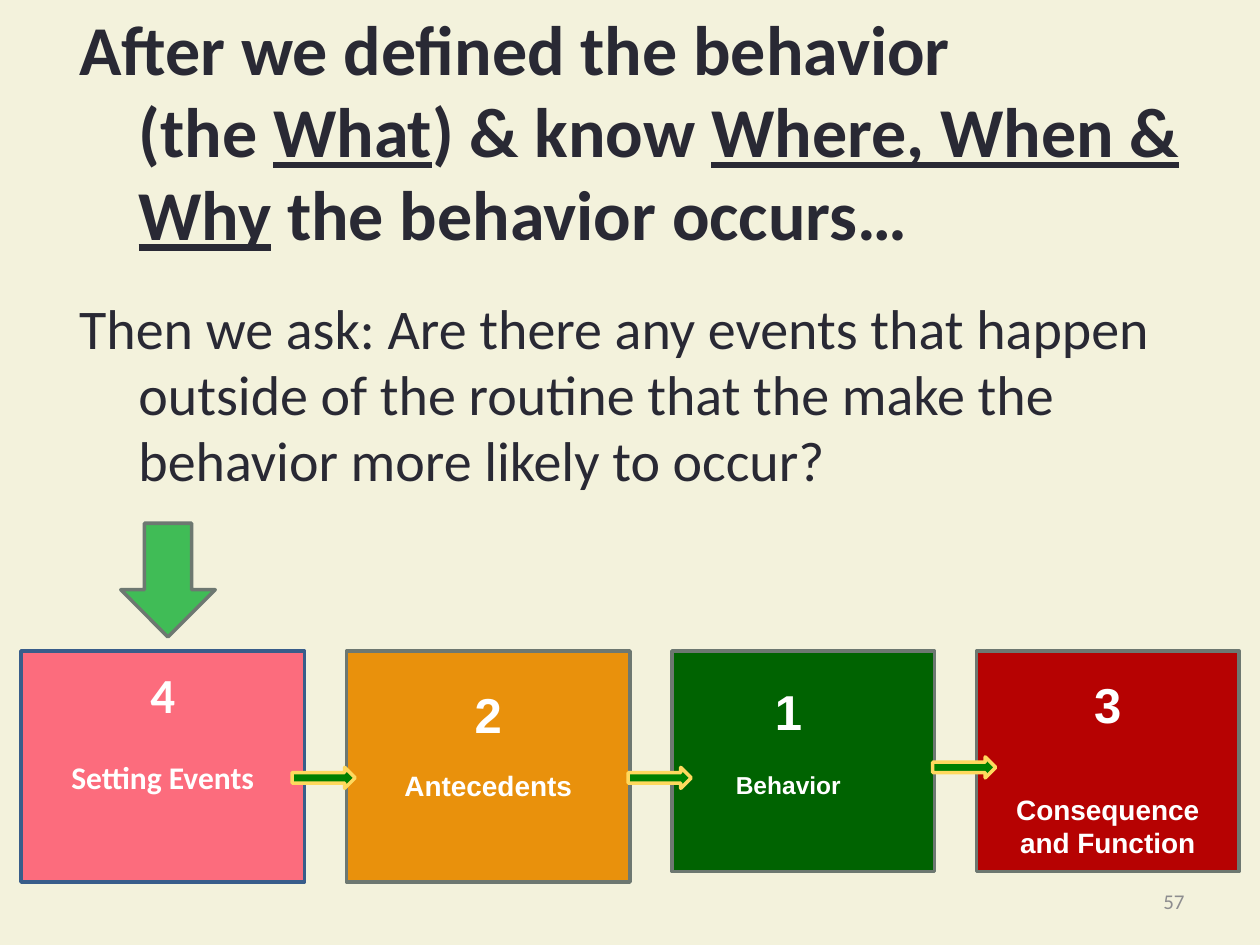
from pptx import Presentation
from pptx.dml.color import RGBColor
from pptx.enum.shapes import MSO_SHAPE
from pptx.enum.text import MSO_ANCHOR, MSO_AUTO_SIZE, PP_ALIGN
from pptx.util import Pt

RECTANGLE, RIGHT_ARROW, DOWN_ARROW = MSO_SHAPE.RECTANGLE, MSO_SHAPE.RIGHT_ARROW, MSO_SHAPE.DOWN_ARROW
TOP, MIDDLE = MSO_ANCHOR.TOP, MSO_ANCHOR.MIDDLE
LEFT, CENTER, RIGHT = PP_ALIGN.LEFT, PP_ALIGN.CENTER, PP_ALIGN.RIGHT
NO_AUTOFIT = MSO_AUTO_SIZE.NONE

CREAM = RGBColor(0xF3, 0xF2, 0xDC)
INK = RGBColor(0x29, 0x29, 0x34)
WHITE = RGBColor(0xFF, 0xFF, 0xFF)
GRAY = RGBColor(0x8D, 0x8D, 0x8F)
SLATE = RGBColor(0x6D, 0x78, 0x71)
BLUE = RGBColor(0x38, 0x5D, 0x8A)
PINK = RGBColor(0xFC, 0x6C, 0x7D)
ORANGE = RGBColor(0xE9, 0x91, 0x0C)
DARK_GREEN = RGBColor(0x00, 0x63, 0x01)
RED = RGBColor(0xB6, 0x02, 0x02)
ARROW_GREEN = RGBColor(0x00, 0x80, 0x00)
YELLOW = RGBColor(0xFF, 0xD9, 0x5E)
LIGHT_GREEN = RGBColor(0x40, 0xBC, 0x56)

TITLE_RUNS = [
    ("After we defined the behavior\v(the ", False), ("What", True), (") & know ", False),
    ("Where, When & Why", True), (" the behavior occurs…", False),
]
QUESTION_RUNS = [
    ("Then we ask: Are there any events that happen outside of the routine "
     "that the make the behavior more likely to occur?", False),
]
STAGES = [
    dict(box=(12, 372, 162, 132), number="4", label="Setting Events", fill=PINK, line=BLUE,
         font="Calibri", size=18, top=8, gap=19.5, shift=0),
    dict(box=(198, 372, 162, 132), number="2", label="Antecedents", fill=ORANGE, line=SLATE,
         font="Arial", size=16, top=19, gap=14.5, shift=0),
    dict(box=(384, 372, 150, 126), number="1", label="Behavior", fill=DARK_GREEN, line=SLATE,
         font="Arial", size=14, top=17.5, gap=17, shift=17),
    dict(box=(558, 372, 150, 126), number="3", label="Consequence and Function", fill=RED, line=SLATE,
         font="Arial", size=16, top=13.5, gap=33.5, shift=0),
]
ARROWS = [(168, 438.5), (360, 438.5), (534, 432.5)]


def points(box):
    """Turn a box of numbers into lengths."""
    return [Pt(value) for value in box]


def set_attributes(target, values):
    """Set every attribute named in a dict."""
    for name, value in values.items():
        setattr(target, name, value)


def format_font(font, name, size, color, bold=False):
    """Give a font its face, size, colour and weight."""
    set_attributes(font, dict(name=name, size=Pt(size), bold=bold))
    font.color.rgb = color


def fill_hanging_text(shape, box, runs, size, bold):
    """Place a text shape and write one paragraph with a hanging indent."""
    set_attributes(shape, dict(zip(("left", "top", "width", "height"), points(box))))
    frame = shape.text_frame
    set_attributes(frame, dict(word_wrap=True, auto_size=NO_AUTOFIT, vertical_anchor=TOP))
    paragraph = frame.paragraphs[0]
    set_attributes(paragraph, dict(alignment=LEFT, line_spacing=0.98, space_before=Pt(0)))
    properties = paragraph._p.get_or_add_pPr()
    properties.set("marL", str(Pt(36)))
    properties.set("indent", str(-Pt(33.84)))
    for text, underline in runs:
        for index, part in enumerate(text.split("\v")):
            if index:
                paragraph.add_line_break()
            run = paragraph.add_run()
            run.text = part
            run.font.underline = underline
            format_font(run.font, "Calibri", size, INK, bold)


def add_outlined_shape(slide, kind, box, fill, line):
    """Add a flat preset shape with a two-point outline."""
    shape = slide.shapes.add_shape(kind, *points(box))
    shape.shadow.inherit = False
    shape.fill.solid()
    shape.fill.fore_color.rgb = fill
    shape.line.color.rgb = line
    shape.line.width = Pt(2)
    return shape


def add_stage(slide, stage):
    """Add one numbered stage box with its label."""
    shape = add_outlined_shape(slide, RECTANGLE, stage["box"], stage["fill"], stage["line"])
    frame = shape.text_frame
    set_attributes(frame, dict(word_wrap=True, vertical_anchor=TOP, margin_top=Pt(stage["top"])))
    number, label = frame.paragraphs[0], frame.add_paragraph()
    number._p.get_or_add_pPr().set("marR", str(Pt(stage["shift"])))
    label.space_before = Pt(stage["gap"])
    for paragraph, text, size in ((number, stage["number"], 28), (label, stage["label"], stage["size"])):
        paragraph.alignment = CENTER
        run = paragraph.add_run()
        run.text = text
        format_font(run.font, stage["font"], size, WHITE, True)


def add_stage_chain(slide):
    """Add the stage boxes, the arrows between them and the pointer to the first."""
    for stage in STAGES:
        add_stage(slide, stage)
    for left, top in ARROWS:
        add_outlined_shape(slide, RIGHT_ARROW, (left - 1, top, 36, 12), ARROW_GREEN, YELLOW)
    add_outlined_shape(slide, DOWN_ARROW, (69, 299, 54, 65), LIGHT_GREEN, SLATE)


def add_page_number(slide, box, text):
    """Add the page number at the right of its box."""
    frame = slide.shapes.add_textbox(*points(box)).text_frame
    set_attributes(frame, dict(word_wrap=True, vertical_anchor=MIDDLE))
    paragraph = frame.paragraphs[0]
    paragraph.alignment = RIGHT
    run = paragraph.add_run()
    run.text = text
    format_font(run.font, "Calibri", 12, GRAY)


def main():
    """Build and save the presentation."""
    presentation = Presentation()
    set_attributes(presentation, dict(slide_width=Pt(720), slide_height=Pt(540)))
    slide = presentation.slides.add_slide(presentation.slide_layouts[5])
    slide.background.fill.solid()
    slide.background.fill.fore_color.rgb = CREAM
    fill_hanging_text(slide.shapes.title, (36, 2, 648, 152), TITLE_RUNS, 40, True)
    question_box = (36, 166, 648, 126)
    question = slide.shapes.add_textbox(*points(question_box))
    fill_hanging_text(question, question_box, QUESTION_RUNS, 32, False)
    add_stage_chain(slide)
    add_page_number(slide, (516, 500.5, 168, 29), "57")
    presentation.save("out.pptx")


if __name__ == "__main__":
    main()
